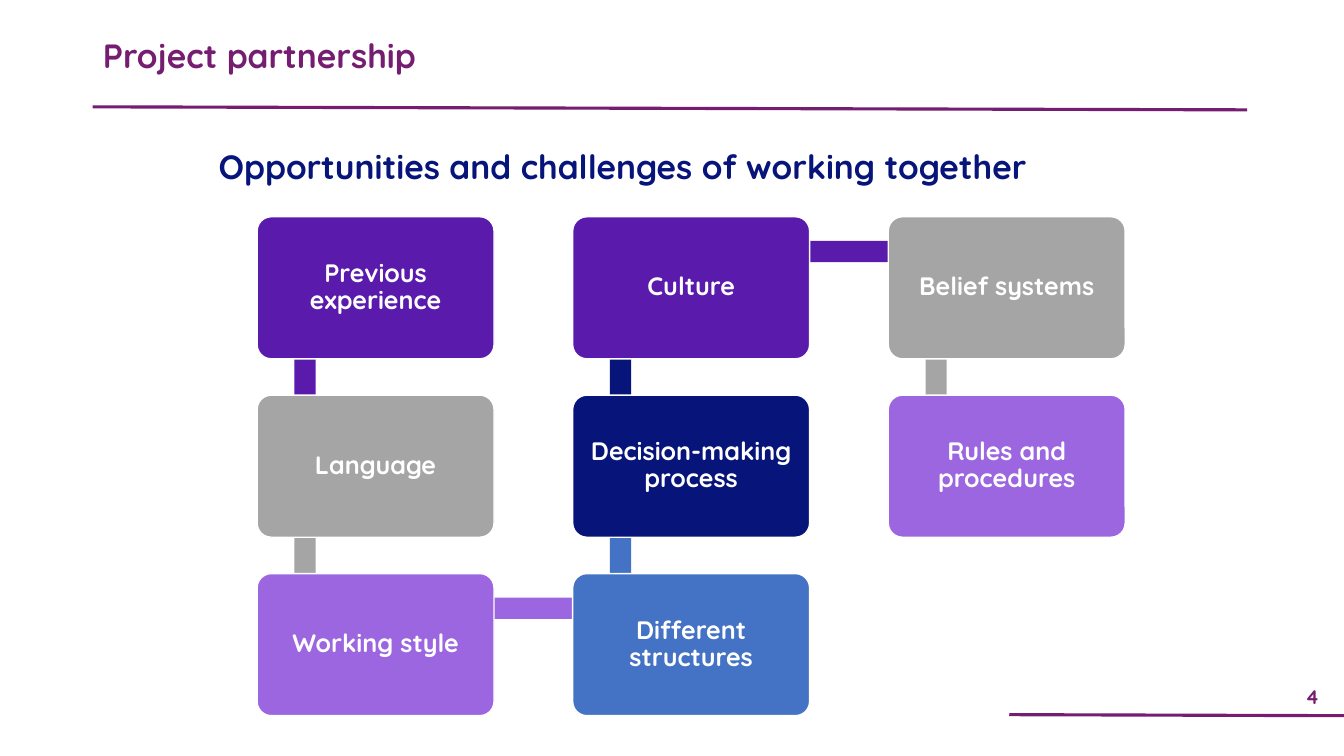
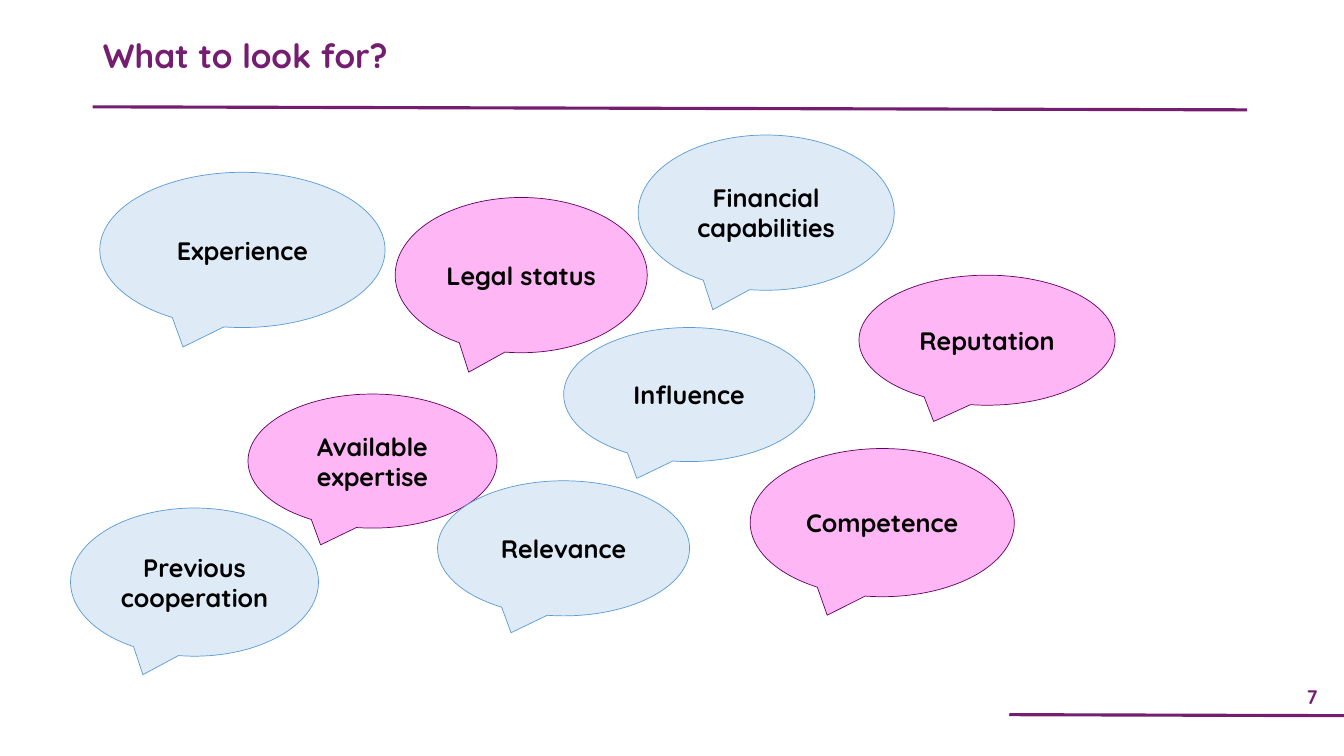
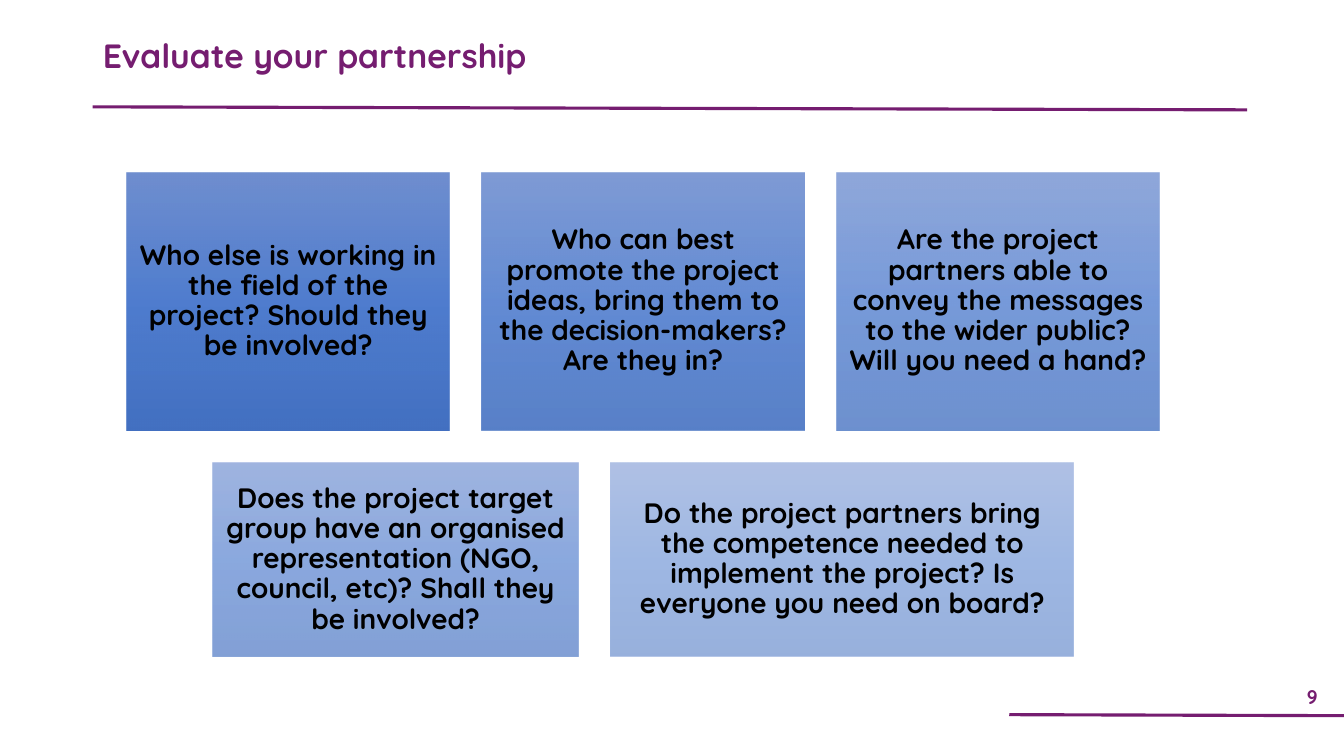
from dataclasses import dataclass

from lxml import etree
from pptx import Presentation
from pptx import util as u
from pptx.dml.color import RGBColor
from pptx.enum import shapes, text
from pptx.oxml import parse_xml
from pptx.oxml.ns import nsdecls, qn


@dataclass(frozen=True)
class Theme:
    font: str = "Quicksand"
    plum: str = "751D70"
    violet: str = "5A1BAD"
    lilac: str = "9B66E0"
    navy: str = "07147A"
    blue: str = "4472C4"
    grey: str = "A5A5A5"
    white: str = "FFFFFF"
    black: str = "000000"
    sky: tuple = ("DEEBF7", "5B9BD5")    # fill, outline
    pink: tuple = ("FFB6F4", "660066")
    gradient: tuple = ("6183CB", "3E70CA", "3062BB")
    heading: int = 24
    question: int = 20
    label: int = 18
    number: int = 14
    spacing: float = 0.9


T = Theme()
PX = 9144  # 100 px to the inch
SLIDE_W, SLIDE_H = 1333, 750

# Content: slide 1, a chain of cards (text, column, row, colour)
SUBTITLE = "Opportunities and challenges of working together"
CHAIN = [
    ("Previous experience", 0, 0, T.violet),
    ("Language", 0, 1, T.grey),
    ("Working style", 0, 2, T.lilac),
    ("Different structures", 1, 2, T.blue),
    ("Decision-making process", 1, 1, T.navy),
    ("Culture", 1, 0, T.violet),
    ("Belief systems", 2, 0, T.grey),
    ("Rules and procedures", 2, 1, T.lilac),
]

# Content: slide 2, speech bubbles (text, box, colours)
BUBBLES = [
    ("Experience", (99, 171, 283, 154), T.sky),
    ("Legal status", (392, 196, 250, 154), T.pink),
    ("Financial capabilities", (633, 134, 254, 154), T.sky),
    ("Reputation", (852, 273, 254, 129), T.pink),
    ("Influence", (559, 325, 249, 133), T.sky),
    ("Available expertise", (246, 391, 247, 133), T.pink),
    ("Previous cooperation", (70, 504, 246, 147), T.sky),
    ("Relevance", (434, 477, 250, 134), T.sky),
    ("Competence", (744, 445, 262, 147), T.pink),
]

# Content: slide 3, rows of questions (row height, [(width, text), ...])
QUESTION_ROWS = [
    (256, [
        (320, "Who else is working in the field of the project? Should they be involved?"),
        (320, "Who can best promote the project ideas, bring them to the "
              "decision-makers? Are they in?"),
        (320, "Are the project partners able to convey the messages to the wider "
              "public? Will you need a hand?"),
    ]),
    (192, [
        (363, "Does the project target group have an organised representation "
              "(NGO, council, etc)? Shall they be involved?"),
        (459, "Do the project partners bring the competence needed to implement "
              "the project? Is everyone you need on board?"),
    ]),
]


def emu(*lengths):
    return [u.Emu(n * PX) for n in lengths]


def rgb(value):
    return RGBColor.from_string(value)


def write(sp, words, size, color, align=text.PP_ALIGN.CENTER,
          anchor=text.MSO_ANCHOR.MIDDLE, spacing=None, margin=None):
    tf = sp.text_frame
    tf.text = words
    tf.word_wrap = True
    tf.auto_size = text.MSO_AUTO_SIZE.NONE
    tf.vertical_anchor = anchor
    if margin is not None:
        tf.margin_left, tf.margin_top, tf.margin_right, tf.margin_bottom = emu(*[margin] * 4)
    p = tf.paragraphs[0]
    p.alignment = align
    p.space_before = u.Pt(0)
    if spacing:
        p.line_spacing = spacing
    f = p.runs[0].font
    f.name, f.size, f.bold = T.font, u.Pt(size), True
    f.color.rgb = rgb(color)
    return p


def add_box(s, kind, box, fill=None, line=None, width=1):
    sp = s.shapes.add_shape(kind, *emu(*box))
    sp.shadow.inherit = False
    if fill:
        sp.fill.solid()
        sp.fill.fore_color.rgb = rgb(fill)
    if line:
        sp.line.color.rgb = rgb(line)
        sp.line.width = u.Pt(width)
    else:
        sp.line.fill.background()
    return sp


def add_rule(s, *ends):
    line = s.shapes.add_connector(shapes.MSO_CONNECTOR.STRAIGHT, *emu(*ends))
    line.line.color.rgb = rgb(T.plum)
    line.line.width = u.Pt(2.25)
    etree.SubElement(line._element.spPr, qn("a:effectLst"))


def place(sp, *box):
    sp.left, sp.top, sp.width, sp.height = emu(*box)


def add_slide(prs, layout, title, number):
    """Slide with the shared title, rules and page number."""
    s = prs.slides.add_slide(prs.slide_layouts[layout])
    place(s.shapes.title, 92, 34, 973, 65)
    write(s.shapes.title, title, T.heading, T.plum, text.PP_ALIGN.LEFT,
          text.MSO_ANCHOR.TOP, T.spacing)
    add_rule(s, 92, 106, 1237, 109)
    add_rule(s, 1001, 709, SLIDE_W, 710)
    write(s.shapes.add_textbox(*emu(1270, 673, 63, 36)), str(number), T.number, T.plum)
    return s


def add_chain(s):
    left, top, card_w, card_h = 255, 215, 235, 141
    pitch_x, pitch_y, bar = 313, 177, 21
    for i, (words, col, row, color) in enumerate(CHAIN):
        x, y = left + col * pitch_x, top + row * pitch_y
        # Bar to the next card, partly hidden behind both cards
        if i + 1 < len(CHAIN):
            next_col, next_row = CHAIN[i + 1][1:3]
            if next_col == col:
                start = top + min(row, next_row) * pitch_y
                bar_box = (x + 37, start + 34, bar, pitch_y)
            else:
                bar_box = (x + 47, y + 24, pitch_x, bar)
            add_box(s, shapes.MSO_SHAPE.RECTANGLE, bar_box, color)
        card = add_box(s, shapes.MSO_SHAPE.ROUNDED_RECTANGLE,
                       (x, y, card_w, card_h), color, T.white)
        card.adjustments[0] = 0.1
        write(card, words, T.label, T.white, spacing=T.spacing, margin=7)


def fill_gradient(sp, alpha):
    stops = "".join(
        f'<a:gs pos="{i * 50000}"><a:srgbClr val="{color}">'
        f'<a:alpha val="{alpha * 1000}"/></a:srgbClr></a:gs>'
        for i, color in enumerate(T.gradient))
    grad = parse_xml(f'<a:gradFill {nsdecls("a")} rotWithShape="1"><a:gsLst>{stops}</a:gsLst>'
                     '<a:lin ang="5400000" scaled="0"/></a:gradFill>')
    sp._element.spPr.find(qn("a:prstGeom")).addnext(grad)


def add_questions(s):
    center, y, gap, alpha = 638, 171, 32, 90
    for height, row in QUESTION_ROWS:
        total = sum(w for w, _ in row) + gap * (len(row) - 1)
        x = center - total // 2
        for width, words in row:
            sp = add_box(s, shapes.MSO_SHAPE.RECTANGLE, (x, y, width, height))
            fill_gradient(sp, alpha)
            write(sp, words, T.question, T.black, spacing=T.spacing, margin=8)
            x += width + gap
            alpha -= 10
        y += height + gap


def main():
    prs = Presentation()
    prs.slide_width, prs.slide_height = emu(SLIDE_W, SLIDE_H)

    # Project partnership
    s = add_slide(prs, 1, "Project partnership", 4)
    body = s.placeholders[1]
    place(body, 92, 144, 1051, 56)
    p = write(body, SUBTITLE, T.heading, T.navy, anchor=text.MSO_ANCHOR.TOP, spacing=T.spacing)
    pPr = p._p.get_or_add_pPr()
    pPr.set("marL", "0")
    pPr.set("indent", "0")
    etree.SubElement(pPr, qn("a:buNone"))
    add_chain(s)

    # What to look for?
    s = add_slide(prs, 5, "What to look for?", 7)
    for words, box, (fill, line) in BUBBLES:
        sp = add_box(s, shapes.MSO_SHAPE.OVAL_CALLOUT, box, fill, line, 0.5)
        write(sp, words, T.label, T.black)

    # Evaluate your partnership
    s = add_slide(prs, 5, "Evaluate your partnership", 9)
    add_questions(s)

    prs.save("out.pptx")


if __name__ == "__main__":
    main()
